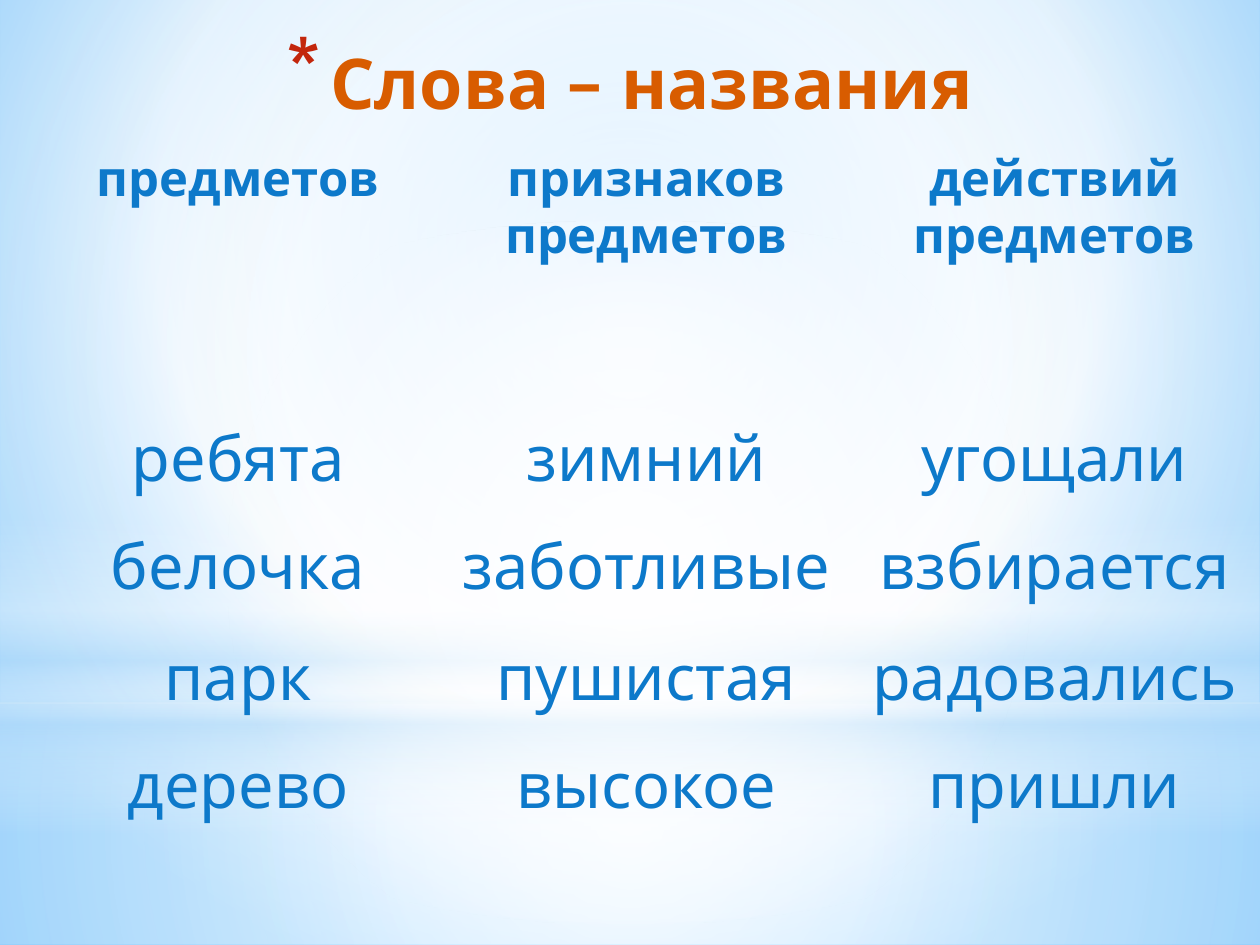
from lxml.etree import SubElement
from pptx import Presentation
from pptx.dml.color import RGBColor
from pptx.enum.shapes import MSO_SHAPE
from pptx.enum.text import MSO_ANCHOR, PP_ALIGN
from pptx.oxml.ns import qn
from pptx.util import Inches, Pt

FONT = "Karla"
COLORS = {
    "white": "FFFFFF", "pale": "B4DCFA", "sky": "9ED5FF", "deep": "5BB9FF",
    "title": "D85C00", "star": "C3260C", "text": "0D79CA",
}
NO_GRID = "{2D5ABB26-0587-4C30-8999-92F81FD0307C}"
CENTER = (50, 50, 50, 50)
ROWS = [
    ("предметов", "признаков предметов", "действий предметов"),
    ("ребята", "зимний", "угощали"),
    ("белочка", "заботливые", "взбирается"),
    ("парк", "пушистая", "радовались"),
    ("дерево", "высокое", "пришли"),
]
HEIGHTS = (2.16, 0.86, 0.88, 0.86, 1.47)


def add(parent, tag, **attrs):
    return SubElement(parent, qn(tag), {k: str(v) for k, v in attrs.items()})


def blend(props, stops, focus=None):
    """Swap a solid fill for a gradient: round a focus, or top to bottom.

    Each stop is (percent, colour name, opacity percent).
    """
    solid = props.find(qn("a:solidFill"))
    grad = props.makeelement(qn("a:gradFill"), {"rotWithShape": "1"})
    props.replace(solid, grad)
    group = add(grad, "a:gsLst")
    for pos, name, alpha in stops:
        stop = add(group, "a:gs", pos=pos * 1000)
        color = add(stop, "a:srgbClr", val=COLORS[name])
        if alpha < 100:
            add(color, "a:alpha", val=alpha * 1000)
    if focus:
        route = add(grad, "a:path", path="circle")
        sides = {k: v * 1000 for k, v in zip("ltrb", focus)}
        add(route, "a:fillToRect", **sides)
    else:
        add(grad, "a:lin", ang=90 * 60000, scaled=0)


def add_glow(slide, kind, box, stops, focus=None):
    shape = slide.shapes.add_shape(kind, *map(Inches, box))
    shape.shadow.inherit = False
    shape.line.fill.background()
    shape.fill.solid()
    blend(shape._element.spPr, stops, focus)


def add_scene(slide, box):
    """Background, two soft panels, the horizon band and a white glow."""
    left, top, width, height = box
    fill = slide.background.fill
    fill.solid()
    blend(slide._element.cSld.bg.bgPr,
          [(0, "sky", 100), (60, "white", 100), (100, "deep", 100)],
          (20, 10, 20, 60))
    rect, sky = MSO_SHAPE.RECTANGLE, 5.58
    add_glow(slide, rect, (left, top + sky, width, height - sky),
             [(0, "white", 91), (37, "white", 76), (100, "pale", 79)], CENTER)
    add_glow(slide, rect, (left, top, width, sky),
             [(0, "white", 89), (48, "white", 62), (100, "pale", 79)], CENTER)
    add_glow(slide, rect, (left, top + 4.12, width, 2.5),
             [(0, "white", 0), (29, "white", 30), (45, "pale", 40),
              (55, "white", 26), (65, "pale", 60), (100, "white", 0)])
    add_glow(slide, MSO_SHAPE.OVAL, (left, top + 1.75, width, sky),
             [(0, "white", 100), (56, "white", 0)], CENTER)


def add_words(para, text, size, color, bold):
    para.alignment = PP_ALIGN.CENTER
    run = para.add_run()
    run.text = text
    font = run.font
    font.name, font.size, font.bold = FONT, Pt(size), bold
    font.color.rgb = RGBColor.from_string(COLORS[color])


def add_title(slide, box):
    frame = slide.shapes.add_textbox(*map(Inches, box)).text_frame
    frame.word_wrap = True
    frame.vertical_anchor = MSO_ANCHOR.MIDDLE
    para = frame.paragraphs[0]
    add_words(para, "Слова – названия", 40, "title", True)
    props = para._p.get_or_add_pPr()
    props.set("marL", str(Inches(0.35)))
    props.set("indent", str(Inches(-0.35)))
    add(add(props, "a:buClr"), "a:srgbClr", val=COLORS["star"])
    add(props, "a:buSzPct", val=128000)
    add(props, "a:buChar", char="*")


def add_grid(slide, box):
    """Table of words: a bold heading row, then four rows of examples."""
    frame = slide.shapes.add_table(len(ROWS), len(ROWS[0]), *map(Inches, box))
    table = frame.table
    table.first_row = table.horz_banding = False
    table._tbl.tblPr.find(qn("a:tableStyleId")).text = NO_GRID
    for col in table.columns:
        col.width = Inches(box[2] / len(ROWS[0]))
    for i, (words, height) in enumerate(zip(ROWS, HEIGHTS)):
        table.rows[i].height = Inches(height)
        head = i == 0
        for j, word in enumerate(words):
            cell = table.cell(i, j)
            cell.fill.background()
            para = cell.text_frame.paragraphs[0]
            add_words(para, word, 28 if head else 36, "text", head)
            space = add(para._p.get_or_add_pPr(), "a:spcBef")
            add(space, "a:spcPct", val=20000)


def main():
    deck = Presentation()
    deck.slide_width, deck.slide_height = Inches(10), Inches(7.5)
    slide = deck.slides.add_slide(deck.slide_layouts[6])
    add_scene(slide, (0, 0, 10, 7.5))
    add_title(slide, (0.5, 0.21, 8.99, 0.87))
    add_grid(slide, (0.27, 1.15, 9.72, sum(HEIGHTS)))
    deck.save("out.pptx")


if __name__ == "__main__":
    main()
